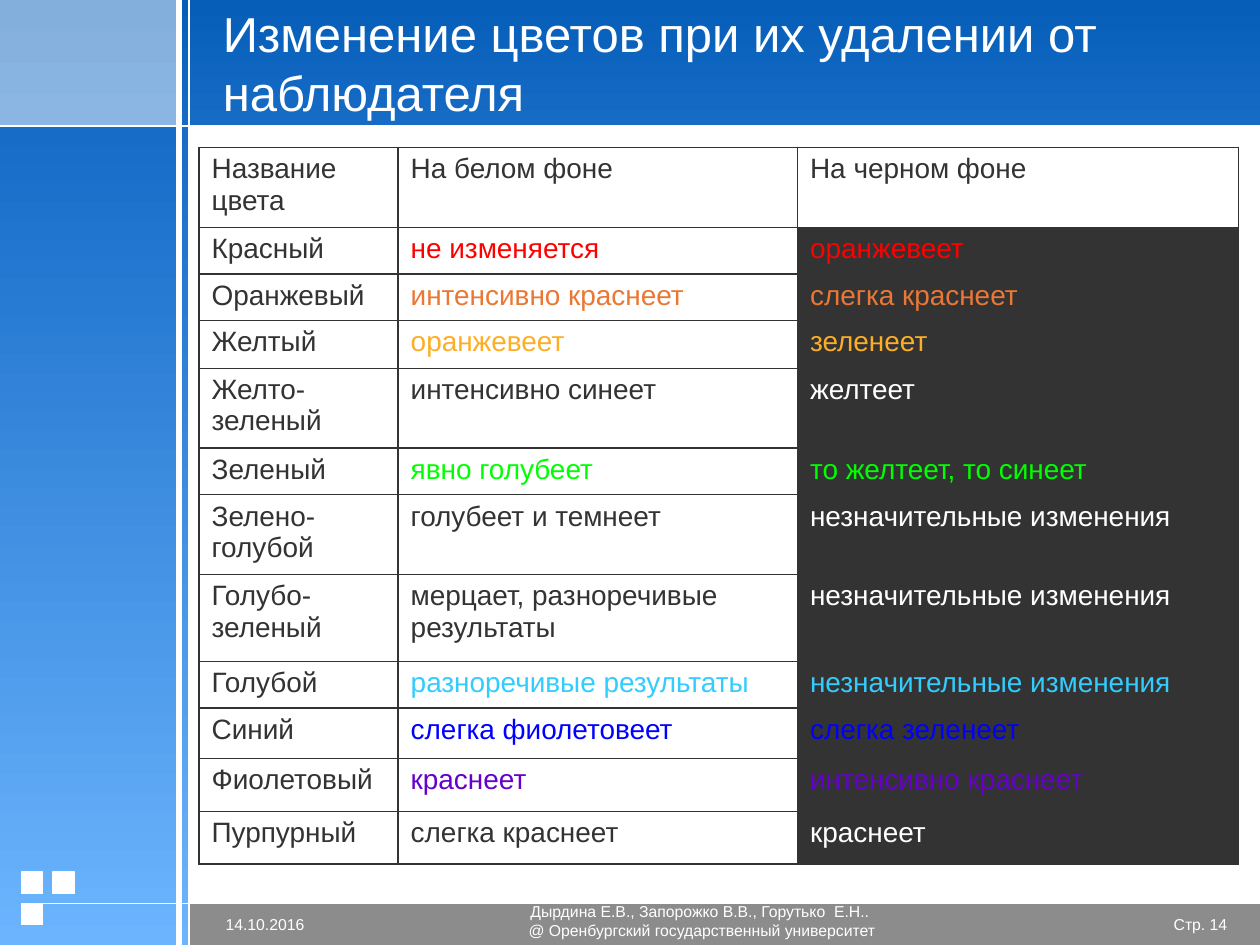
from dataclasses import dataclass

from lxml import etree
from pptx import Presentation
from pptx.dml.color import RGBColor
from pptx.enum.shapes import MSO_CONNECTOR, MSO_SHAPE
from pptx.enum.text import MSO_ANCHOR, PP_ALIGN
from pptx.oxml.ns import qn
from pptx.util import Inches, Pt

RECT, STRAIGHT = MSO_SHAPE.RECTANGLE, MSO_CONNECTOR.STRAIGHT
LEFT, CENTER, RIGHT = PP_ALIGN.LEFT, PP_ALIGN.CENTER, PP_ALIGN.RIGHT
TOP, MIDDLE = MSO_ANCHOR.TOP, MSO_ANCHOR.MIDDLE


@dataclass(frozen=True)
class Theme:
    font: str = "Arial"
    title: int = 28
    body: int = 16
    footer: int = 9
    page: str = "BDE0FF"
    white: str = "FFFFFF"
    dark: str = "333333"
    gray: str = "8C8C8C"
    corner: tuple = ("83AFDC", "8BB6E3")
    sidebar: tuple = ("166CC7", "6CB4FE")
    header: tuple = ("065EB8", "166BC5")
    red: str = "FF0000"
    orange: str = "EB7734"
    yellow: str = "FCAF26"
    green: str = "00FF00"
    sky: str = "33CCFF"
    blue: str = "0000FF"
    violet: str = "6600CC"


THEME = Theme()


def write(frame, text, size, color, align=LEFT):
    """Fill a text frame, one paragraph for each line of text."""
    frame.word_wrap = True
    for i, line in enumerate(text.split("\n")):
        paragraph = frame.paragraphs[0] if i == 0 else frame.add_paragraph()
        paragraph.alignment = align
        run = paragraph.add_run()
        run.text = line
        run.font.name = THEME.font
        run.font.size = Pt(size)
        run.font.color.rgb = RGBColor.from_string(color)


def add_cell_borders(cell, color, width):
    properties = cell._tc.get_or_add_tcPr()
    for i, side in enumerate(("a:lnL", "a:lnR", "a:lnT", "a:lnB")):
        border = etree.Element(qn(side), w=str(Pt(width)))
        fill = etree.SubElement(border, qn("a:solidFill"))
        etree.SubElement(fill, qn("a:srgbClr"), val=color)
        properties.insert(i, border)


prs = Presentation()
prs.slide_width, prs.slide_height = Inches(10), Inches(7.5)
slide = prs.slides.add_slide(prs.slide_layouts[6])
slide.background.fill.solid()
slide.background.fill.fore_color.rgb = RGBColor.from_string(THEME.page)

# Background panels and the three small squares
SQUARE = 0.17
panels = [
    (1.5, 1, 8.5, 6.17, THEME.white),
    (1.5, 7.17, 8.5, 0.33, THEME.gray),
    (0, 0, 1.5, 1, THEME.corner),
    (0, 1, 1.5, 6.5, THEME.sidebar),
    (1.42, 0, 8.58, 1, THEME.header),
]
squares = [(x, y, SQUARE, SQUARE, THEME.white)
           for x, y in ((0.17, 7.17), (0.17, 6.92), (0.42, 6.92))]
for *box, color in panels + squares:
    panel = slide.shapes.add_shape(RECT, *map(Inches, box))
    panel.shadow.inherit = False
    if isinstance(color, tuple):
        panel.fill.gradient()
        panel.fill.gradient_angle = 270
        for stop, shade in zip(panel.fill.gradient_stops, color):
            stop.color.rgb = RGBColor.from_string(shade)
    else:
        panel.fill.solid()
        panel.fill.fore_color.rgb = RGBColor.from_string(color)
    if box[2] == SQUARE:
        panel.line.color.rgb = RGBColor.from_string(THEME.white)
        panel.line.width = Pt(0.75)
    else:
        panel.line.fill.background()

# White rules between the panels
for *ends, width in [
    (1.5, 0, 1.5, 7.5, 1),
    (1.42, 0, 1.42, 7.5, 3),
    (10, 1, 0, 1, 1),
    (10, 7.17, 0.17, 7.17, 1),
]:
    rule = slide.shapes.add_connector(STRAIGHT, *map(Inches, ends))
    rule.line.color.rgb = RGBColor.from_string(THEME.white)
    rule.line.width = Pt(width)
    etree.SubElement(rule._element.spPr, qn("a:effectLst"))

# Title and footer
for text, box, size, align, margins in [
    ("Стр. 14", (9.17, 7.25, 0.57, 0.17), THEME.footer, RIGHT, (0, 0)),
    ("14.10.2016", (1.79, 7.25, 1.21, 0.17), THEME.footer, LEFT, (0, 0)),
    ("Дырдина Е.В., Запорожко В.В., Горутько  Е.Н.. \n"
     "@ Оренбургский государственный университет",
     (2.72, 7, 5.7, 0.61), THEME.footer, CENTER, (0, 0)),
    ("Изменение цветов при их удалении от наблюдателя",
     (1.67, 0.08, 8.17, 0.83), THEME.title, LEFT, (0.1, 0.05)),
]:
    frame = slide.shapes.add_textbox(*map(Inches, box)).text_frame
    frame.margin_left = frame.margin_right = Inches(margins[0])
    frame.margin_top = frame.margin_bottom = Inches(margins[1])
    frame.vertical_anchor = MIDDLE
    write(frame, text, size, THEME.white, align=align)

# Row height, colour name, change on white, change on black, text colour
# (None keeps the text neutral: dark on white, white on black)
color_changes = [
    (0.63, "Название цвета", "На белом фоне", "На черном фоне", THEME.dark),
    (0.37, "Красный", "не изменяется", "оранжевеет", THEME.red),
    (0.37, "Оранжевый", "интенсивно краснеет", "слегка краснеет", THEME.orange),
    (0.38, "Желтый", "оранжевеет", "зеленеет", THEME.yellow),
    (0.63, "Желто-зеленый", "интенсивно синеет", "желтеет", None),
    (0.37, "Зеленый", "явно голубеет", "то желтеет, то синеет", THEME.green),
    (0.63, "Зелено-голубой", "голубеет и темнеет", "незначительные изменения", None),
    (0.69, "Голубо-зеленый", "мерцает, разноречивые результаты",
     "незначительные изменения", None),
    (0.37, "Голубой", "разноречивые результаты", "незначительные изменения", THEME.sky),
    (0.4, "Синий", "слегка фиолетовеет", "слегка зеленеет", THEME.blue),
    (0.42, "Фиолетовый", "краснеет", "интенсивно краснеет", THEME.violet),
    (0.42, "Пурпурный", "слегка краснеет", "краснеет", None),
]
column_widths = (1.58, 3.17, 3.5)
table = slide.shapes.add_table(
    len(color_changes), len(column_widths),
    Inches(1.58), Inches(1.17), Inches(8.25), Inches(5.67)).table
table.first_row = table.horz_banding = False
for column, width in zip(table.columns, column_widths):
    column.width = Inches(width)

for r, (height, name, on_white, on_black, accent) in enumerate(color_changes):
    table.rows[r].height = Inches(height)
    row = [
        (name, THEME.dark, None),
        (on_white, accent or THEME.dark, THEME.white if r else None),
        (on_black, accent or THEME.white, THEME.dark if r else None),
    ]
    for c, (text, color, fill) in enumerate(row):
        cell = table.cell(r, c)
        cell.vertical_anchor = TOP
        if fill:
            cell.fill.solid()
            cell.fill.fore_color.rgb = RGBColor.from_string(fill)
        else:
            cell.fill.background()
        add_cell_borders(cell, THEME.dark, 1)
        write(cell.text_frame, text, THEME.body, color)

prs.save("out.pptx")
